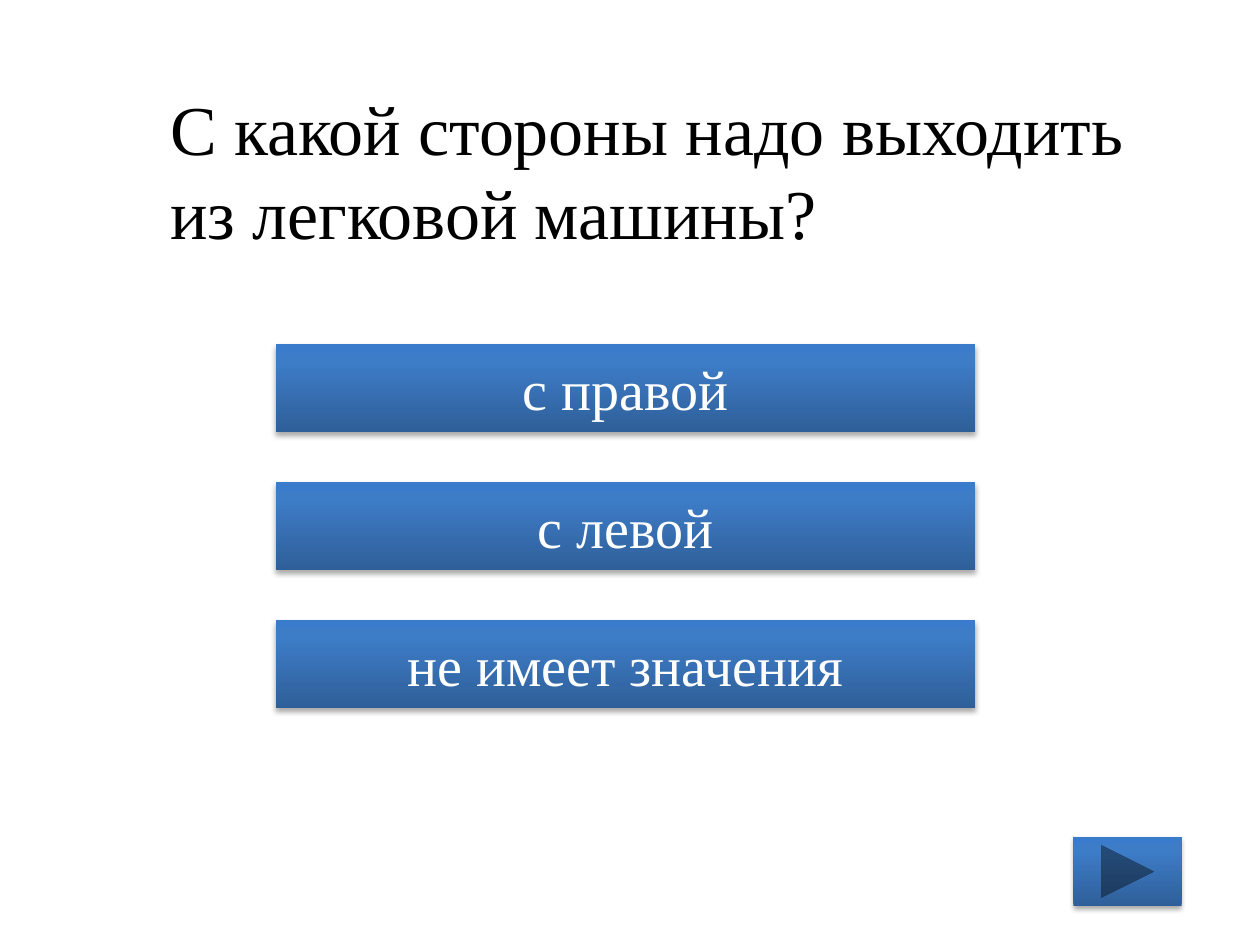
import pptx
import pptx.dml.color
import pptx.enum.shapes
import pptx.enum.text
import pptx.oxml
import pptx.oxml.ns
import pptx.util

Cm = pptx.util.Cm
Pt = pptx.util.Pt
Buttons = pptx.enum.shapes.MSO_SHAPE
Align = pptx.enum.text.PP_ALIGN


def colour(value):
    return pptx.dml.color.RGBColor.from_string(value)


def write(frame, wording, size, hue, align):
    frame.word_wrap = True
    frame.vertical_anchor = pptx.enum.text.MSO_ANCHOR.MIDDLE
    paragraph = frame.paragraphs[0]
    paragraph.text = wording
    paragraph.alignment = align
    font_format = {"name": "Times New Roman", "size": Pt(size)}
    for attribute, value in font_format.items():
        setattr(paragraph.font, attribute, value)
    paragraph.font.color.rgb = colour(hue)


namespace = pptx.oxml.ns.nsdecls("a")
gradient_stops = [(0, "2F5F99"), (80, "3D7CC7"), (100, "3A7CCB")]
stops_xml = "".join(
    f'<a:gs pos="{position * 1000}"><a:srgbClr val="{colour(hue)}"/></a:gs>'
    for position, hue in gradient_stops
)
gradient_xml = (
    f'<a:gradFill {namespace} rotWithShape="1"><a:gsLst>{stops_xml}</a:gsLst>'
    '<a:lin ang="16200000" scaled="0"/></a:gradFill>'
)
shadow_xml = (
    f'<a:outerShdw {namespace} blurRad="{Pt(3.1)}" dist="{Pt(1.8)}" dir="5400000" rotWithShape="0">'
    f'<a:srgbClr val="{colour("000000")}"><a:alpha val="35000"/></a:srgbClr></a:outerShdw>'
)

presentation = pptx.Presentation()
presentation.slide_width = Cm(25.4)
presentation.slide_height = Cm(19.05)
slide = presentation.slides.add_slide(presentation.slide_layouts[6])

question = slide.shapes.add_textbox(Cm(3.18), Cm(1.57), Cm(19.84), Cm(3.68))
write(question.text_frame, "С какой стороны надо выходить из легковой машины?", 40, "000000", Align.LEFT)
question.text_frame.auto_size = pptx.enum.text.MSO_AUTO_SIZE.SHAPE_TO_FIT_TEXT

answers = ["с правой", "с левой", "не имеет значения"]
buttons = [(Buttons.ACTION_BUTTON_FORWARD_OR_NEXT, 21.64, 16.87, 2.18, 1.4, "")]
for row, answer in enumerate(answers):
    buttons.append((Buttons.ACTION_BUTTON_CUSTOM, 5.56, 6.93 + row * 2.78, 14.1, 1.78, answer))

for kind, left, top, width, height, wording in buttons:
    button = slide.shapes.add_shape(kind, Cm(left), Cm(top), Cm(width), Cm(height))
    button.line.fill.background()
    button.shadow.inherit = False
    properties = button.element.spPr
    properties.insert(2, pptx.oxml.parse_xml(gradient_xml))
    effects = properties.find(pptx.oxml.ns.qn("a:effectLst"))
    effects.append(pptx.oxml.parse_xml(shadow_xml))
    if wording:
        write(button.text_frame, wording, 32, "FFFFFF", Align.CENTER)

presentation.save("out.pptx")
